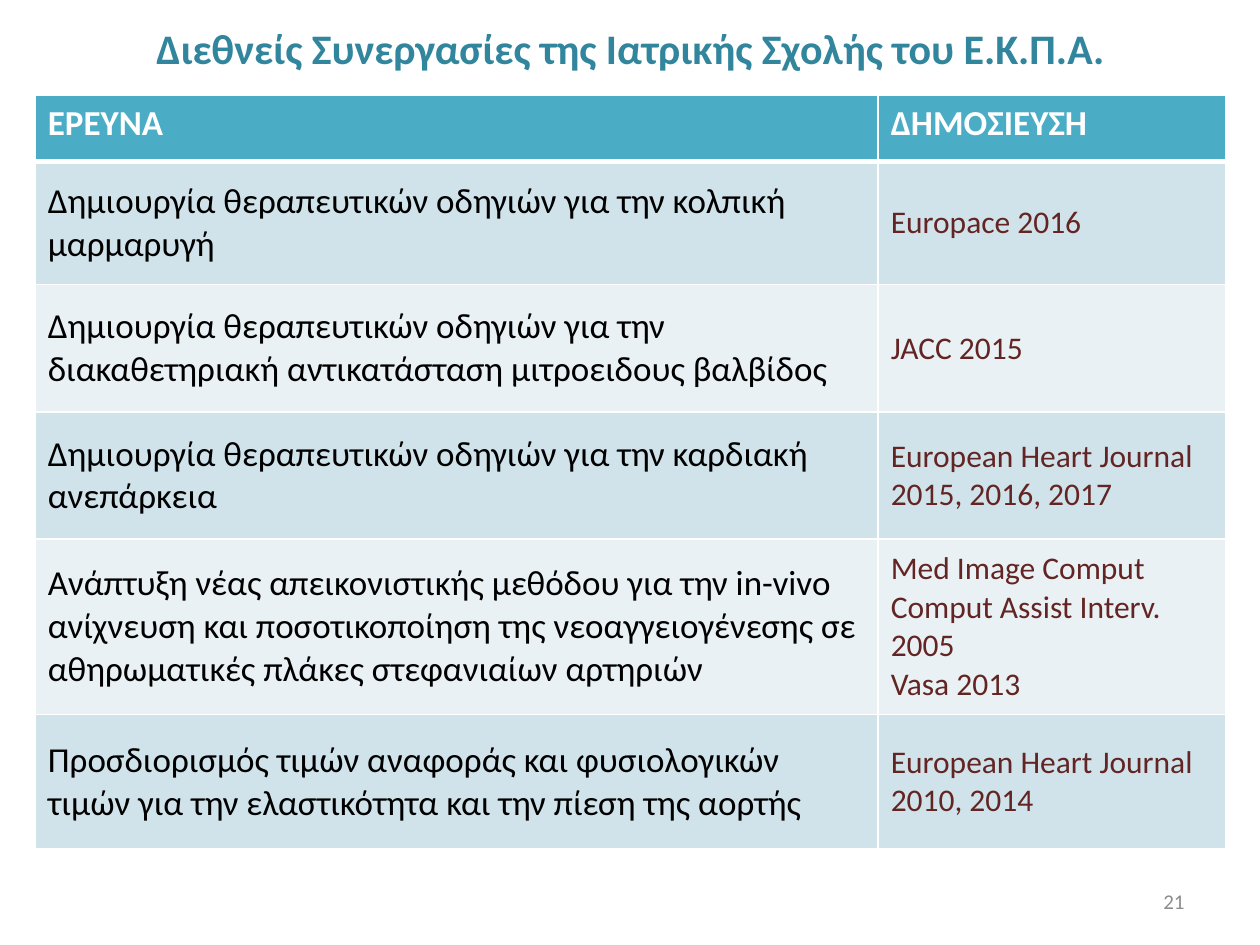
"""Build a slide listing the medical school's international research collaborations."""
from dataclasses import dataclass

from lxml.etree import SubElement
from pptx import Presentation
from pptx.dml.color import RGBColor
from pptx.enum.text import MSO_ANCHOR as Anchor, MSO_AUTO_SIZE as AutoSize, PP_ALIGN as Align
from pptx.oxml.ns import qn
from pptx.util import Inches, Pt


@dataclass(frozen=True)
class Theme:
    font: str = "Calibri"
    heading: str = "31859C"
    header_fill: str = "4BACC6"
    bands: tuple = ("D0E3EA", "E9F1F5")
    white: str = "FFFFFF"
    research: str = "000000"
    journal: str = "632523"
    number: str = "8C8C8C"
    heading_size: int = 24
    research_size: int = 20
    journal_size: int = 18
    number_size: int = 12


theme = Theme()


def add_text(paragraph, text, size, color, bold=False):
    run = paragraph.add_run()
    run.text = text
    run.font.name = theme.font
    run.font.size = Pt(size)
    run.font.bold = bold
    run.font.color.rgb = RGBColor.from_string(color)


def style_cell(cell, fill, edges):
    properties = cell._tc.get_or_add_tcPr()
    for side, width in edges.items():
        edge = SubElement(properties, qn(f"a:ln{side}"), w=str(Pt(width)))
        SubElement(SubElement(edge, qn("a:solidFill")), qn("a:srgbClr"), val=theme.white)
    cell.fill.solid()
    cell.fill.fore_color.rgb = RGBColor.from_string(fill)


headers = ("ΕΡΕΥΝΑ", "ΔΗΜΟΣΙΕΥΣΗ")
studies = (
    ("Δημιουργία θεραπευτικών οδηγιών για την κολπική μαρμαρυγή",
     ("Europace 2016",)),
    ("Δημιουργία θεραπευτικών οδηγιών για την διακαθετηριακή αντικατάσταση "
     "μιτροειδους βαλβίδος",
     ("JACC 2015",)),
    ("Δημιουργία θεραπευτικών οδηγιών για την καρδιακή ανεπάρκεια",
     ("European Heart Journal 2015, 2016, 2017",)),
    ("Ανάπτυξη νέας απεικονιστικής μεθόδου για την in-vivo ανίχνευση και "
     "ποσοτικοποίηση της νεοαγγειογένεσης σε αθηρωματικές πλάκες στεφανιαίων αρτηριών",
     ("Med Image Comput Comput Assist Interv. 2005", "Vasa 2013")),
    ("Προσδιορισμός τιμών αναφοράς και φυσιολογικών τιμών για την ελαστικότητα "
     "και την πίεση της αορτής",
     ("European Heart Journal 2010, 2014",)),
)
column_widths = (6.69, 2.76)
row_heights = (0.52, 0.98, 1.01, 1.01, 1.39, 1.07)

prs = Presentation()
prs.slide_width, prs.slide_height = Inches(10), Inches(7.5)
slide = prs.slides.add_slide(prs.slide_layouts[5])

heading = slide.shapes.title
heading.left, heading.top = Inches(1.11), Inches(0.13)
heading.width, heading.height = Inches(7.79), Inches(0.5)
heading.text_frame.word_wrap = False
heading.text_frame.auto_size = AutoSize.SHAPE_TO_FIT_TEXT
add_text(heading.text_frame.paragraphs[0],
         "Διεθνείς Συνεργασίες της Ιατρικής Σχολής του Ε.Κ.Π.Α.",
         theme.heading_size, theme.heading, bold=True)

collaborations = slide.shapes.add_table(
    len(row_heights), len(column_widths), Inches(0.28), Inches(0.76),
    Inches(sum(column_widths)), Inches(sum(row_heights))).table
for column, width in zip(collaborations.columns, column_widths):
    column.width = Inches(width)
for row, height in zip(collaborations.rows, row_heights):
    row.height = Inches(height)

for cell, label in zip(collaborations.rows[0].cells, headers):
    style_cell(cell, theme.header_fill, {"L": 1, "R": 1, "T": 1, "B": 3})
    add_text(cell.text_frame.paragraphs[0], label, theme.research_size, theme.white, bold=True)

for index, (research, journals) in enumerate(studies):
    research_cell, journal_cell = collaborations.rows[index + 1].cells
    for cell in (research_cell, journal_cell):
        style_cell(cell, theme.bands[index % 2],
                   {"L": 1, "R": 1, "T": 1 if index else 3, "B": 1})
        cell.vertical_anchor = Anchor.MIDDLE
    add_text(research_cell.text_frame.paragraphs[0], research,
             theme.research_size, theme.research)
    for position, journal in enumerate(journals):
        frame = journal_cell.text_frame
        paragraph = frame.add_paragraph() if position else frame.paragraphs[0]
        add_text(paragraph, journal, theme.journal_size, theme.journal)

page_number = slide.shapes.add_textbox(
    Inches(7.17), Inches(6.95), Inches(2.33), Inches(0.4)).text_frame
page_number.word_wrap = True
page_number.vertical_anchor = Anchor.MIDDLE
page_number.paragraphs[0].alignment = Align.RIGHT
add_text(page_number.paragraphs[0], "21", theme.number_size, theme.number)

prs.save("out.pptx")
